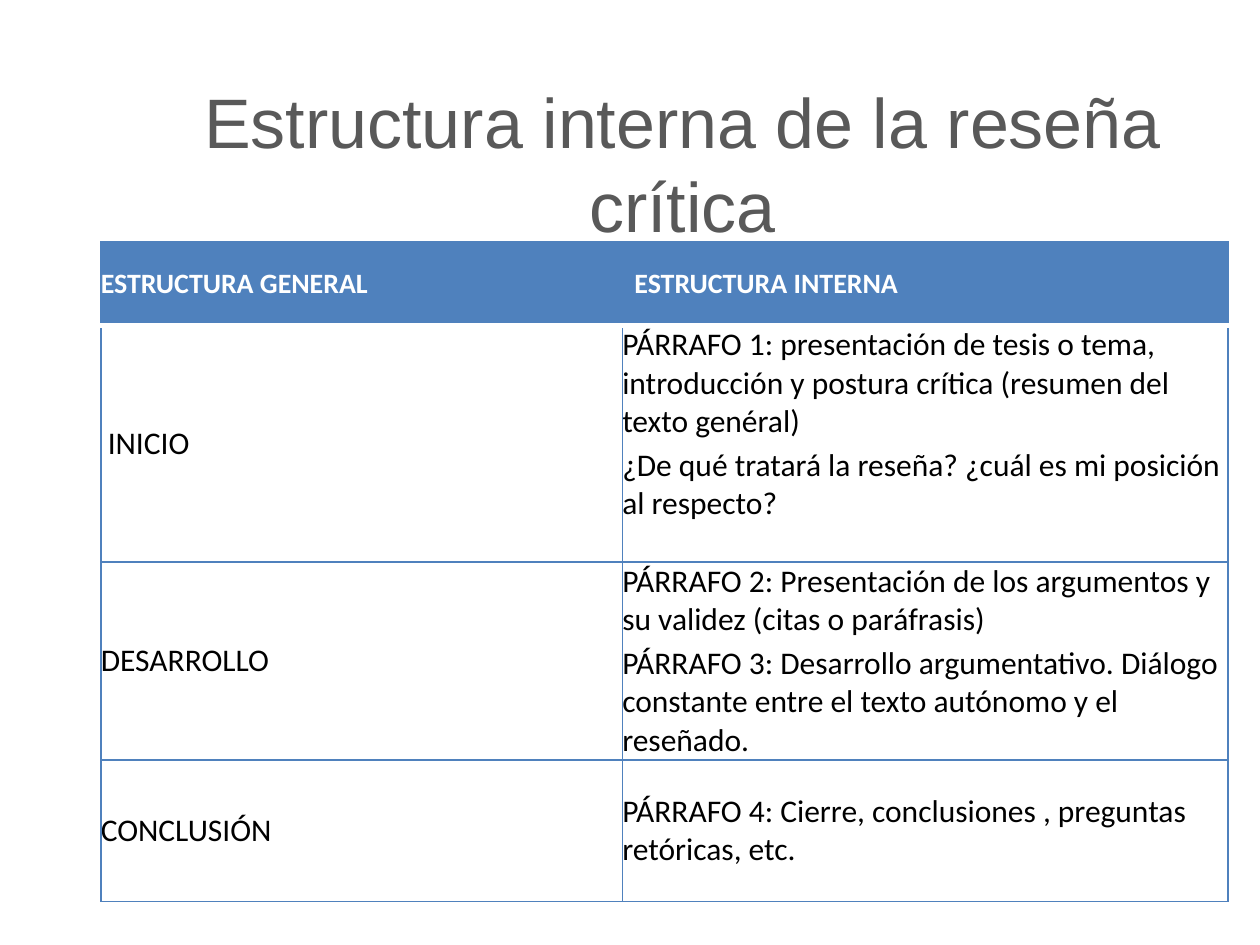
"""Build a slide with a table on the inner structure of a critical review."""
from lxml.etree import SubElement
from pptx import Presentation
from pptx.dml.color import RGBColor
from pptx.enum.text import MSO_ANCHOR as Anchor, PP_ALIGN as Align
from pptx.oxml.ns import qn
from pptx.util import Pt

COLORS = {"title": "595959", "blue": "4F81BD", "white": "FFFFFF", "text": "000000"}
COLUMN_WIDTHS = [298, 346]
ROW_HEIGHTS = [48, 135, 113, 81]
ROWS = [
    (["ESTRUCTURA GENERAL"], ["ESTRUCTURA INTERNA"]),
    (["INICIO"], [
        "PÁRRAFO 1: presentación de tesis o tema, introducción y postura crítica (resumen del texto genéral)",
        "¿De qué tratará la reseña? ¿cuál es mi posición al respecto?"]),
    (["DESARROLLO"], [
        "PÁRRAFO 2: Presentación de los argumentos y su validez (citas o paráfrasis)",
        "PÁRRAFO 3: Desarrollo argumentativo. Diálogo constante entre el texto autónomo y el reseñado."]),
    (["CONCLUSIÓN"], ["PÁRRAFO 4: Cierre, conclusiones , preguntas retóricas, etc."]),
]
LEFT_MARGINS = {(0, 1): 7, (1, 0): 4}


def add_run(paragraph, text, font, size, color, bold=False):
    run = paragraph.add_run()
    run.text = text
    run.font.name = font
    run.font.size = Pt(size)
    run.font.bold = bold
    run.font.color.rgb = RGBColor.from_string(COLORS[color])


def add_border(cell, side, color, width):
    line = SubElement(cell._tc.get_or_add_tcPr(), qn(f"a:ln{side}"), w=str(Pt(width)))
    SubElement(SubElement(line, qn("a:solidFill")), qn("a:srgbClr"), val=COLORS[color])


prs = Presentation()
prs.slide_width, prs.slide_height = Pt(720), Pt(540)
slide = prs.slides.add_slide(prs.slide_layouts[6])

title = slide.shapes.add_textbox(Pt(66), Pt(21.6), Pt(648), Pt(120)).text_frame
title.word_wrap = True
title.vertical_anchor = Anchor.TOP
title.margin_top = Pt(23)
heading = title.paragraphs[0]
heading.alignment = Align.CENTER
heading.line_spacing = Pt(48)
add_run(heading, "Estructura interna de la reseña crítica", "Arial", 40, "title")

structure = slide.shapes.add_table(
    len(ROWS), len(COLUMN_WIDTHS), Pt(57.6), Pt(138.2),
    Pt(sum(COLUMN_WIDTHS)), Pt(sum(ROW_HEIGHTS))).table
structure.horz_banding = False
for column, width in zip(structure.columns, COLUMN_WIDTHS):
    column.width = Pt(width)

for r, (height, entries) in enumerate(zip(ROW_HEIGHTS, ROWS)):
    structure.rows[r].height = Pt(height)
    header = r == 0
    for c, lines in enumerate(entries):
        cell = structure.cell(r, c)
        cell.margin_top = cell.margin_right = cell.margin_bottom = 0
        cell.margin_left = Pt(LEFT_MARGINS.get((r, c), 0))
        cell.vertical_anchor = Anchor.TOP if (r, c) == (1, 1) else Anchor.MIDDLE
        for side in "LRTB":
            below_header = (r, side) in [(0, "B"), (1, "T")]
            add_border(cell, side, *(("white", 3) if below_header else ("blue", 1)))
        if header:
            cell.fill.solid()
            cell.fill.fore_color.rgb = RGBColor.from_string(COLORS["blue"])
        else:
            cell.fill.background()
        for i, line in enumerate(lines):
            paragraph = cell.text_frame.paragraphs[0] if i == 0 else cell.text_frame.add_paragraph()
            if i:
                paragraph.space_before = Pt(2.8)
            add_run(paragraph, line, "Calibri", 16 if header else 18,
                    "white" if header else "text", header)

prs.save("out.pptx")
